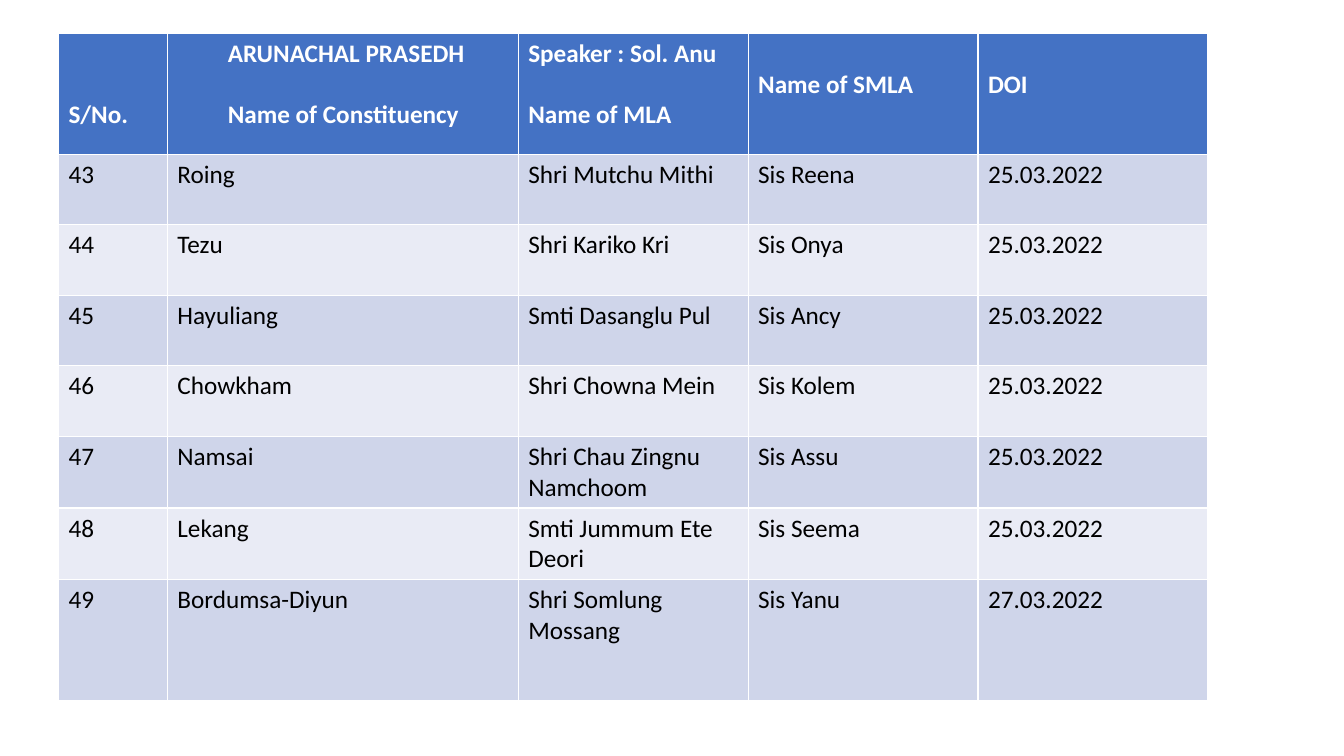
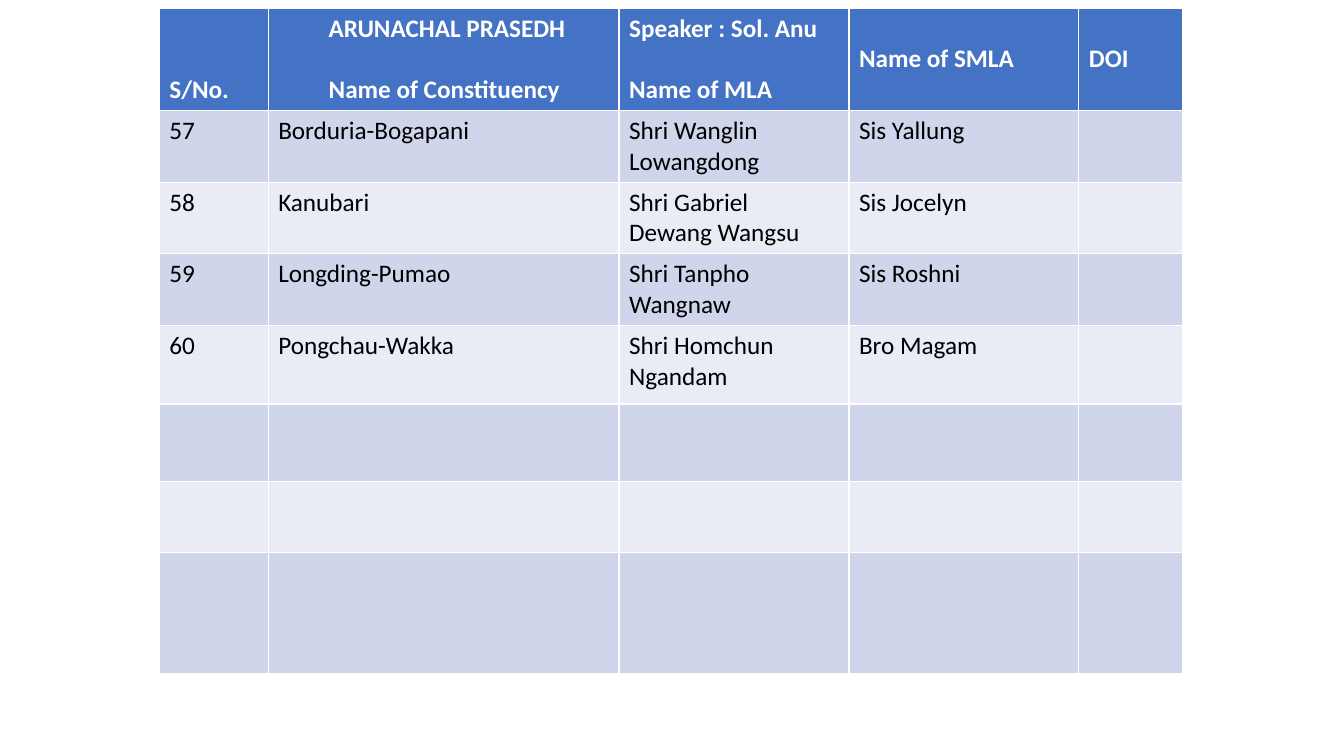
"""Build two slides listing constituencies, their members and contact names."""
import dataclasses

import pptx
import pptx.dml.color
import pptx.util


@dataclasses.dataclass(frozen=True)
class Theme:
    font: str = "Calibri"
    size: float = 18
    line_height: float = 22
    header_fill: str = "4472C4"
    header_text: str = "FFFFFF"
    body_text: str = "000000"
    band_fills: tuple = ("CFD5EA", "E9EBF5")
    cell_margin: float = 0.1
    indent: float = 0.5


@dataclasses.dataclass(frozen=True)
class Heading:
    lines: tuple
    lines_above: int = 0
    indented: bool = False


@dataclasses.dataclass(frozen=True)
class Grid:
    left: float
    top: float
    columns: tuple
    rows: tuple


THEME = Theme()
SLIDE_WIDTH, SLIDE_HEIGHT = 13.33, 7.5
NUMBER_COLUMN, PLACE_COLUMN, NAME_COLUMN = 1.08, 3.48, 2.28
SHARED_COLUMNS = (NUMBER_COLUMN, PLACE_COLUMN, NAME_COLUMN, NAME_COLUMN)
ROW, TALL_ROW = 0.7, 1.2

HEADINGS = (
    Heading(("S/No.",), lines_above=2),
    Heading(("ARUNACHAL PRASEDH", "Name of Constituency"), indented=True),
    Heading(("Speaker : Sol. Anu", "Name of MLA")),
    Heading(("Name of SMLA",), lines_above=1),
    Heading(("DOI",), lines_above=1),
)

FIRST_GRID = Grid(0.58, 0.33, SHARED_COLUMNS + (NAME_COLUMN,),
                  (TALL_ROW,) + (ROW,) * 6 + (TALL_ROW,))
FIRST_MEMBERS = (
    ("43", "Roing", "Shri Mutchu Mithi", "Sis Reena", "25.03.2022"),
    ("44", "Tezu", "Shri Kariko Kri", "Sis Onya", "25.03.2022"),
    ("45", "Hayuliang", "Smti Dasanglu Pul", "Sis Ancy", "25.03.2022"),
    ("46", "Chowkham", "Shri Chowna Mein", "Sis Kolem", "25.03.2022"),
    ("47", "Namsai", "Shri Chau Zingnu Namchoom", "Sis Assu", "25.03.2022"),
    ("48", "Lekang", "Smti Jummum Ete Deori", "Sis Seema", "25.03.2022"),
    ("49", "Bordumsa-Diyun", "Shri Somlung Mossang", "Sis Yanu", "27.03.2022"),
)

SECOND_GRID = Grid(1.58, 0.08, SHARED_COLUMNS + (1.03,),
                   (1,) + (ROW,) * 3 + (0.78, 0.77, ROW, TALL_ROW))
SECOND_MEMBERS = (
    ("57", "Borduria-Bogapani", "Shri Wanglin Lowangdong", "Sis Yallung"),
    ("58", "Kanubari", "Shri Gabriel  Dewang Wangsu", "Sis Jocelyn"),
    ("59", "Longding-Pumao", "Shri Tanpho Wangnaw", "Sis Roshni"),
    ("60", "Pongchau-Wakka", "Shri Homchun Ngandam", "Bro Magam"),
)


def color(value):
    return pptx.dml.color.RGBColor.from_string(value)


def fill_cell(cell, value):
    cell.fill.solid()
    cell.fill.fore_color.rgb = color(value)


def style_paragraph(paragraph, text_color, bold):
    font = paragraph.font
    font.name = THEME.font
    font.size = pptx.util.Pt(THEME.size)
    font.color.rgb = color(text_color)
    font.bold = bold


def write_heading(cell, heading):
    fill_cell(cell, THEME.header_fill)
    cell.margin_top += pptx.util.Pt(heading.lines_above * THEME.line_height)
    if heading.indented:
        cell.margin_left = pptx.util.Inches(THEME.cell_margin + THEME.indent)
    cell.text = "\n".join(heading.lines)
    for index, paragraph in enumerate(cell.text_frame.paragraphs):
        style_paragraph(paragraph, THEME.header_text, True)
        if index:
            paragraph.space_before = pptx.util.Pt(THEME.line_height)


def write_body(cell, text, fill):
    fill_cell(cell, fill)
    if text:
        cell.text = text
        style_paragraph(cell.text_frame.paragraphs[0], THEME.body_text, False)


def add_grid(slide, grid):
    frame = slide.shapes.add_table(
        len(grid.rows), len(grid.columns),
        pptx.util.Inches(grid.left), pptx.util.Inches(grid.top),
        pptx.util.Inches(sum(grid.columns)), pptx.util.Inches(sum(grid.rows)))
    table = frame.table
    for column, width in zip(table.columns, grid.columns):
        column.width = pptx.util.Inches(width)
    for row, height in zip(table.rows, grid.rows):
        row.height = pptx.util.Inches(height)
    return table


def add_member_slide(presentation, grid, members):
    slide = presentation.slides.add_slide(presentation.slide_layouts[6])
    table = add_grid(slide, grid)
    for column, heading in enumerate(HEADINGS):
        write_heading(table.cell(0, column), heading)
    for row in range(1, len(grid.rows)):
        member = members[row - 1] if row <= len(members) else ()
        fill = THEME.band_fills[(row - 1) % len(THEME.band_fills)]
        for column in range(len(grid.columns)):
            text = member[column] if column < len(member) else ""
            write_body(table.cell(row, column), text, fill)


def main():
    presentation = pptx.Presentation()
    presentation.slide_width = pptx.util.Inches(SLIDE_WIDTH)
    presentation.slide_height = pptx.util.Inches(SLIDE_HEIGHT)
    add_member_slide(presentation, FIRST_GRID, FIRST_MEMBERS)
    add_member_slide(presentation, SECOND_GRID, SECOND_MEMBERS)
    presentation.save("out.pptx")


if __name__ == "__main__":
    main()
